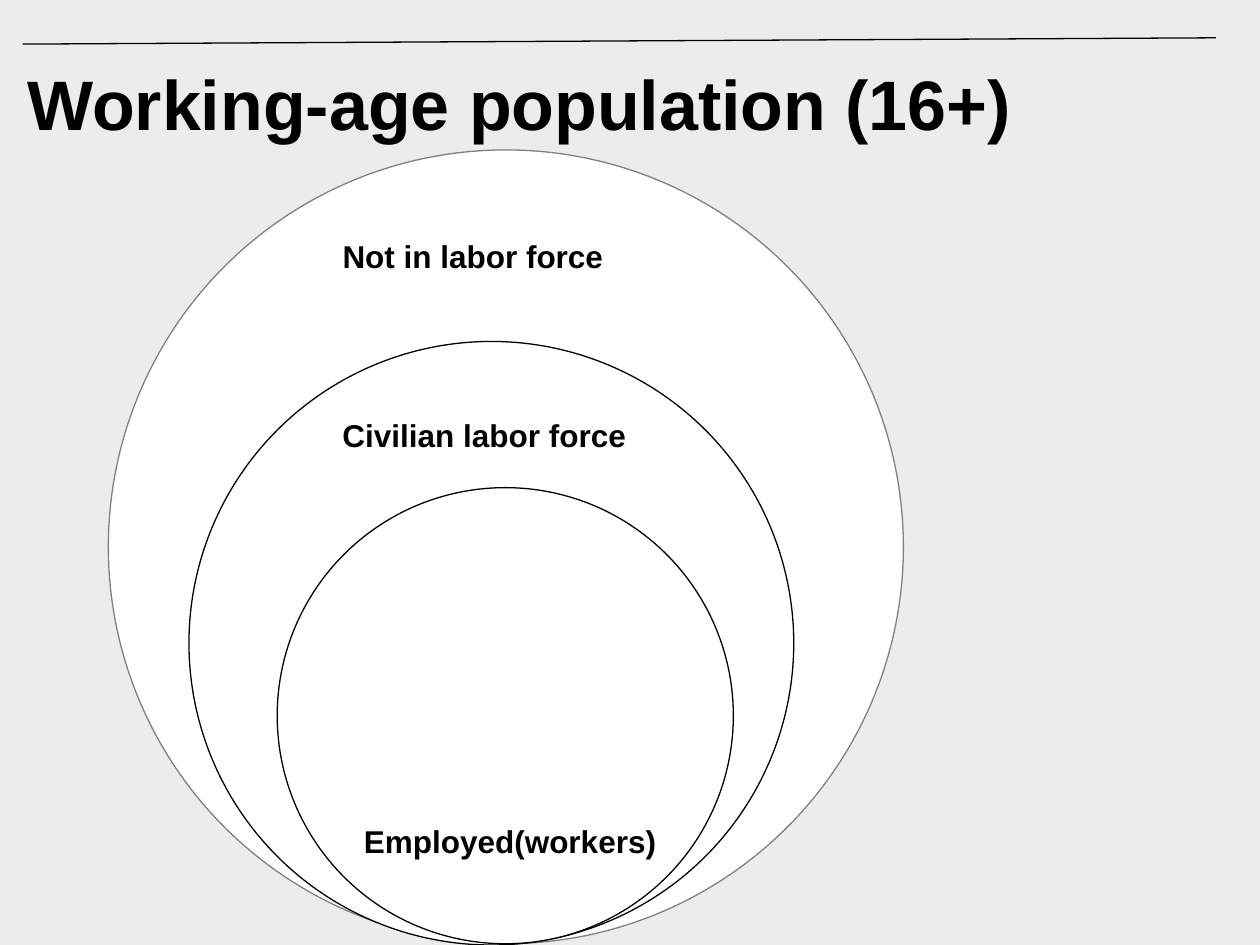
from pptx import Presentation
from pptx.dml.color import RGBColor
from pptx.enum import shapes, text
from pptx.oxml import ns
from pptx.util import Inches, Pt
from lxml import etree

BACKGROUND = RGBColor(0xEC, 0xEC, 0xEC)
BLACK = RGBColor(0, 0, 0)
GRAY = RGBColor(0x80, 0x80, 0x80)
WHITE = RGBColor(0xFF, 0xFF, 0xFF)

TITLE = "Working-age population (16+)"
# Outermost first: circle box, outline colour, label, label box
GROUPS = [
    ((0.86, 1.19, 6.31, 6.3), GRAY, "Not in labor force", (2.62, 1.74, 2.41, 0.5)),
    ((1.5, 2.71, 4.8, 4.79), BLACK, "Civilian labor force", (2.62, 3.16, 2.57, 0.5)),
    ((2.2, 3.87, 3.62, 3.62), BLACK, "Employed(workers)", (2.79, 6.38, 2.72, 0.5)),
]


def add_text(s, words, box, size, inset, anchor, spacing):
    tf = s.shapes.add_textbox(*map(Inches, box)).text_frame
    tf.word_wrap = True
    tf.vertical_anchor = anchor
    tf.margin_left = tf.margin_right = Inches(0.1)
    tf.margin_top = tf.margin_bottom = Inches(inset)
    p = tf.paragraphs[0]
    p.text = words
    p.line_spacing = spacing
    font = p.runs[0].font
    font.name, font.size, font.bold = "Arial", Pt(size), True
    font.color.rgb = BLACK
    return tf


def add_circle(s, box, outline):
    sp = s.shapes.add_shape(shapes.MSO_SHAPE.OVAL, *map(Inches, box))
    sp.shadow.inherit = False
    sp.fill.solid()
    sp.fill.fore_color.rgb = WHITE
    sp.line.color.rgb = outline
    sp.line.width = Pt(0.75)


def add_rule(s, start, end):
    line = s.shapes.add_connector(
        shapes.MSO_CONNECTOR.STRAIGHT, *map(Inches, start + end))
    line.line.color.rgb = BLACK
    line.line.width = Pt(0.75)
    etree.SubElement(line._element.spPr, ns.qn("a:effectLst"))


def main():
    prs = Presentation()
    prs.slide_width, prs.slide_height = Inches(10), Inches(7.5)
    s = prs.slides.add_slide(prs.slide_layouts[6])
    s.background.fill.solid()
    s.background.fill.fore_color.rgb = BACKGROUND

    add_text(s, TITLE, (0.12, 0.44, 8.1, 0.75), 40, 0.05, text.MSO_ANCHOR.MIDDLE, 1.0)
    add_rule(s, (0.18, 0.35), (9.65, 0.3))
    for circle, outline, label, label_box in GROUPS:
        add_circle(s, circle, outline)
        tf = add_text(s, label, label_box, 18, 0.1, text.MSO_ANCHOR.TOP, 1.15)
        tf.auto_size = text.MSO_AUTO_SIZE.SHAPE_TO_FIT_TEXT

    prs.save("out.pptx")


if __name__ == "__main__":
    main()
